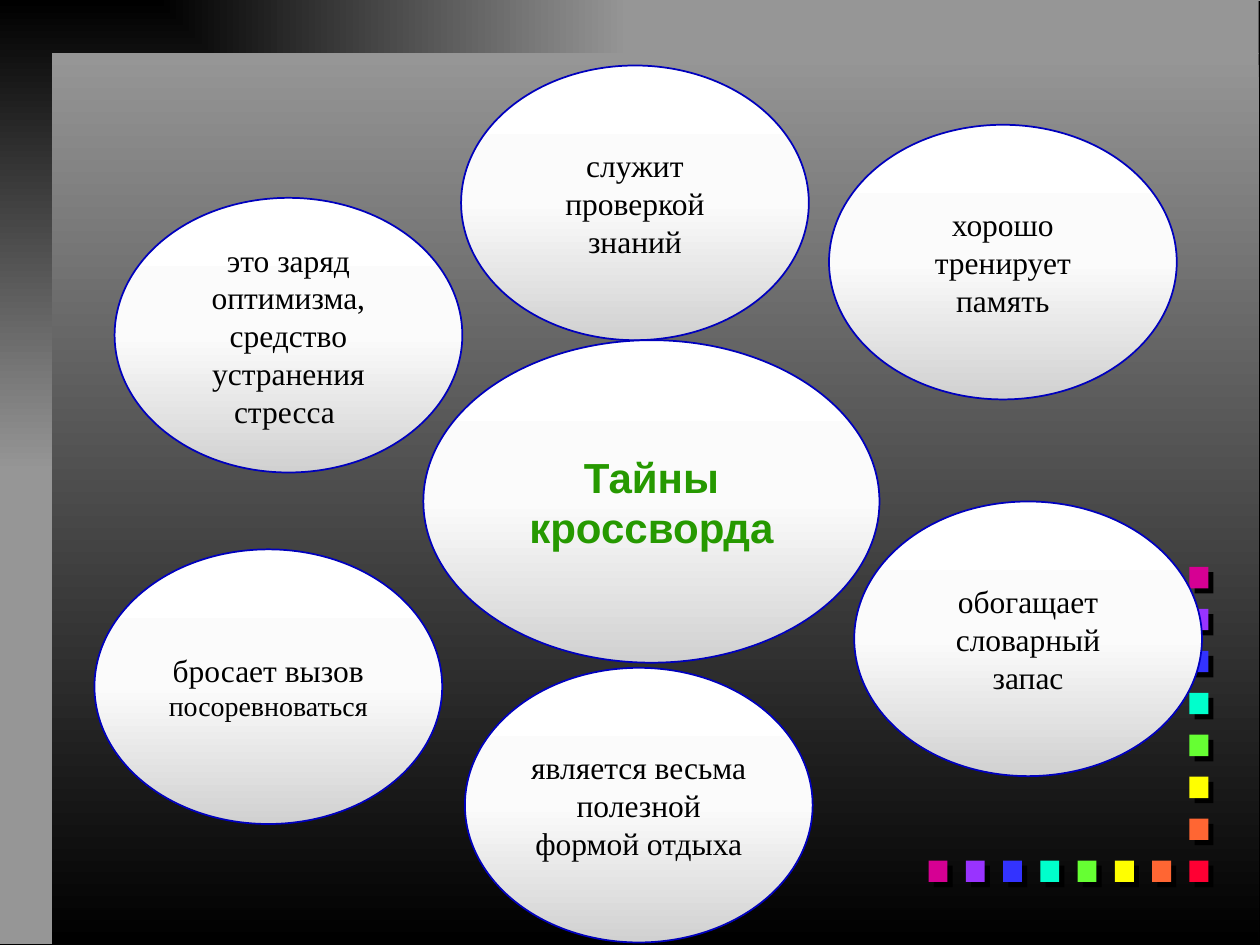
import lxml.etree
import pptx
import pptx.dml.color
import pptx.enum.shapes
import pptx.enum.text
import pptx.oxml.ns
import pptx.util

Inches = pptx.util.Inches
Pt = pptx.util.Pt
RGB = pptx.dml.color.RGBColor.from_string
qn = pptx.oxml.ns.qn
SHAPES = pptx.enum.shapes.MSO_SHAPE


class Theme:
    backdrop = [(0, "969696"), (100, "000000")]
    frame = [(0, "000000"), (100, "969696")]
    bubble = [(0, "FFFFFF"), (50, "FBFBFB"), (100, "D1D1D1")]
    outline = "0000BD"
    shadow = "000000"
    beads = ["FF0033", "FF6633", "FFFF00", "66FF33",
             "00FFCC", "3333FF", "9933FF", "D60093"]
    topic_font, topic_size, topic_color = "Arial", 24, "269900"
    fact_font, fact_size, fact_small, fact_color = "Times New Roman", 18, 16, "000000"


def set_gradient(fill, owner, stops, from_corner=False):
    fill.gradient()
    gradient = owner.find(".//" + qn("a:gradFill"))
    for child in list(gradient):
        gradient.remove(child)
    stop_list = lxml.etree.SubElement(gradient, qn("a:gsLst"))
    for position, color in stops:
        stop = lxml.etree.SubElement(stop_list, qn("a:gs"), pos=str(position * 1000))
        lxml.etree.SubElement(stop, qn("a:srgbClr"), val=color)
    if from_corner:
        route = lxml.etree.SubElement(gradient, qn("a:path"), path="rect")
        lxml.etree.SubElement(route, qn("a:fillToRect"), r="100000", b="100000")
    else:
        lxml.etree.SubElement(gradient, qn("a:lin"), ang="5400000", scaled="0")


def add_shadowed_block(left, top, width, height, distance):
    block = slide.shapes.add_shape(
        SHAPES.RECTANGLE, Inches(left), Inches(top), Inches(width), Inches(height))
    block.line.fill.background()
    block.shadow.inherit = False
    effects = block._element.spPr.find(qn("a:effectLst"))
    shadow = lxml.etree.SubElement(
        effects, qn("a:outerShdw"), blurRad="0", dist=str(Pt(distance)),
        dir="2700000", algn="ctr", rotWithShape="0")
    lxml.etree.SubElement(shadow, qn("a:srgbClr"), val=Theme.shadow)
    return block


deck = pptx.Presentation()
deck.slide_width, deck.slide_height = Inches(10), Inches(7.5)
slide = deck.slides.add_slide(deck.slide_layouts[6])
set_gradient(slide.background.fill, slide._element, Theme.backdrop)

frame = add_shadowed_block(0, 0, 9.99, 7.49, 1.1)
set_gradient(frame.fill, frame._element, Theme.frame, from_corner=True)
panel = add_shadowed_block(0.41, 0.42, 9.58, 7.07, 1.1)
set_gradient(panel.fill, panel._element, Theme.backdrop)

corner_left, corner_top = 9.44, 6.83
column_pitch, row_pitch = 2.07 / 7, 2.33 / 7
row = [(corner_left - i * column_pitch, corner_top, color)
       for i, color in enumerate(Theme.beads)]
column = [(corner_left, corner_top - i * row_pitch, color)
          for i, color in enumerate(Theme.beads)]
for left, top, color in row + column[1:]:
    bead = add_shadowed_block(left, top, 0.15, 0.17, 4.2)
    bead.fill.solid()
    bead.fill.fore_color.rgb = RGB(color)

topic_style = (Theme.topic_font, Theme.topic_color, True)
fact_style = (Theme.fact_font, Theme.fact_color, False)
topic_extent, fact_extent = (3.62, 2.56), (2.76, 2.18)
full = Theme.fact_size
bubbles = [
    (3.66, 0.52, fact_extent, fact_style, [("служит проверкой знаний", full)]),
    (3.36, 2.7, topic_extent, topic_style, [("Тайны кроссворда", Theme.topic_size)]),
    (0.91, 1.57, fact_extent, fact_style,
     [("это заряд оптимизма, средство устранения стресса ", full)]),
    (6.58, 0.99, fact_extent, fact_style, [("хорошо тренирует память", full)]),
    (3.69, 5.3, fact_extent, fact_style,
     [("является весьма полезной формой отдыха", full)]),
    (6.78, 3.98, fact_extent, fact_style, [("обогащает словарный запас", full)]),
    (0.75, 4.36, fact_extent, fact_style,
     [("бросает вызов ", full), ("посоревноваться", Theme.fact_small)]),
]
for left, top, (width, height), (font, color, bold), phrases in bubbles:
    bubble = slide.shapes.add_shape(
        SHAPES.OVAL, Inches(left), Inches(top), Inches(width), Inches(height))
    set_gradient(bubble.fill, bubble._element, Theme.bubble)
    bubble.line.color.rgb = RGB(Theme.outline)
    bubble.line.width = Pt(1)
    bubble.shadow.inherit = False
    bubble.text_frame.word_wrap = True
    bubble.text_frame.vertical_anchor = pptx.enum.text.MSO_ANCHOR.MIDDLE
    paragraph = bubble.text_frame.paragraphs[0]
    paragraph.alignment = pptx.enum.text.PP_ALIGN.CENTER
    for words, size in phrases:
        run = paragraph.add_run()
        run.text = words
        run.font.name = font
        run.font.size = Pt(size)
        run.font.bold = bold
        run.font.color.rgb = RGB(color)

deck.save("out.pptx")
